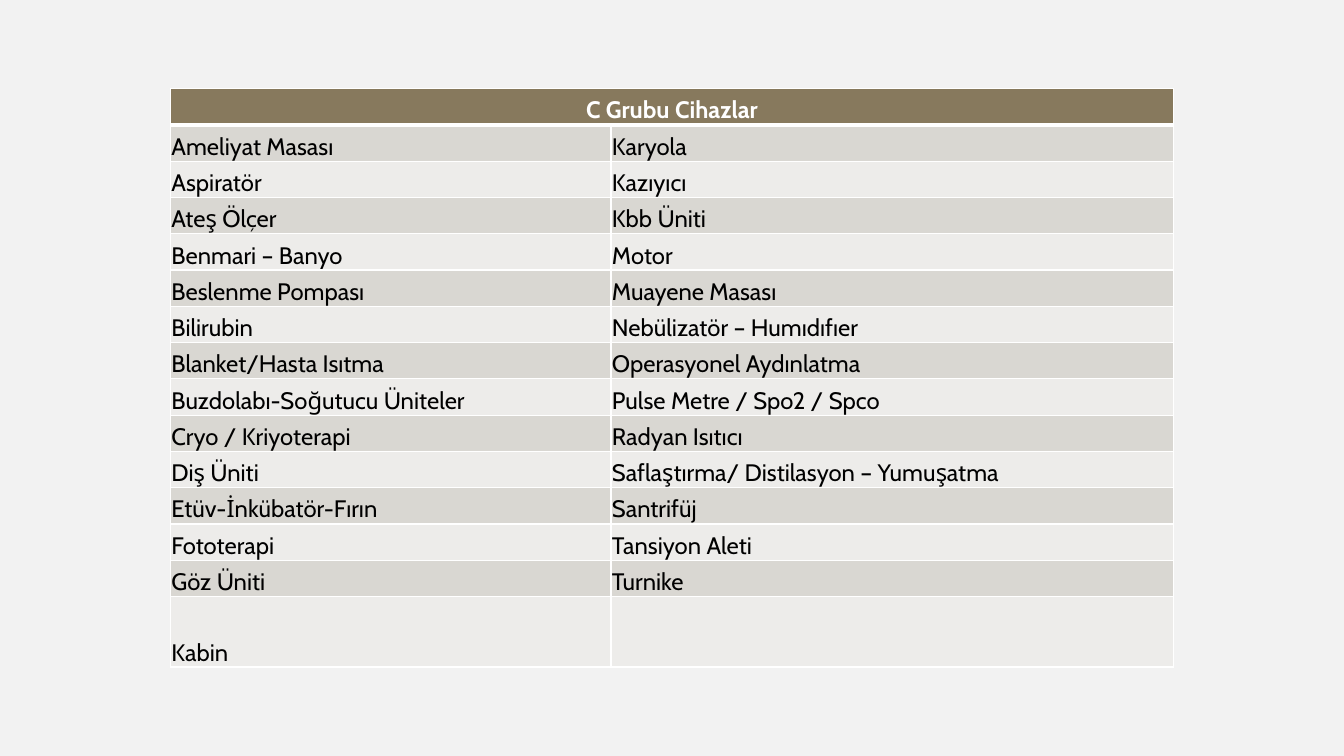
from lxml import etree
from pptx import Presentation
from pptx.dml.color import RGBColor
from pptx.enum.text import MSO_ANCHOR, PP_ALIGN
from pptx.oxml.ns import qn
from pptx.util import Inches, Pt

BACKGROUND = RGBColor(0xF2, 0xF2, 0xF2)
HEADER = RGBColor(0x87, 0x79, 0x5D)
BAND_DARK = RGBColor(0xD9, 0xD7, 0xD2)
BAND_LIGHT = RGBColor(0xED, 0xEC, 0xEA)
WHITE = RGBColor(0xFF, 0xFF, 0xFF)
BLACK = RGBColor(0x00, 0x00, 0x00)

FONT = "Cabin"
COLUMN_WIDTHS = (4.37, 5.58)
ROW_HEIGHT = 0.36
LAST_ROW_HEIGHT = 0.7
TITLE = "C Grubu Cihazlar"
DEVICES = [
    ("Ameliyat Masası", "Karyola"),
    ("Aspiratör", "Kazıyıcı"),
    ("Ateş Ölçer", "Kbb Üniti"),
    ("Benmari – Banyo", "Motor"),
    ("Beslenme Pompası", "Muayene Masası"),
    ("Bilirubin", "Nebülizatör – Humıdıfıer"),
    ("Blanket/Hasta Isıtma", "Operasyonel Aydınlatma"),
    ("Buzdolabı-Soğutucu Üniteler", "Pulse Metre / Spo2 / Spco"),
    ("Cryo / Kriyoterapi", "Radyan Isıtıcı"),
    ("Diş Üniti", "Saflaştırma/ Distilasyon – Yumuşatma"),
    ("Etüv-İnkübatör-Fırın", "Santrifüj"),
    ("Fototerapi", "Tansiyon Aleti"),
    ("Göz Üniti", "Turnike"),
    ("Kabin", ""),
]


def set_borders(cell, top=1, bottom=1):
    tcPr = cell._tc.get_or_add_tcPr()
    for side, width in (("L", 1), ("R", 1), ("T", top), ("B", bottom)):
        ln = etree.SubElement(tcPr, qn(f"a:ln{side}"), w=str(Pt(width)))
        fill = etree.SubElement(ln, qn("a:solidFill"))
        etree.SubElement(fill, qn("a:srgbClr"), val=str(WHITE))


def format_cell(cell, text, fill, color=BLACK, bold=False, align=PP_ALIGN.LEFT):
    cell.fill.solid()
    cell.fill.fore_color.rgb = fill
    cell.vertical_anchor = MSO_ANCHOR.BOTTOM
    cell.margin_left = cell.margin_right = cell.margin_top = Inches(0.01)
    cell.margin_bottom = 0
    cell.text = text
    p = cell.text_frame.paragraphs[0]
    p.alignment = align
    p.font.name = FONT
    p.font.size = Pt(17)
    p.font.bold = bold
    p.font.color.rgb = color


def add_device_table(slide):
    rows = len(DEVICES) + 1
    height = ROW_HEIGHT * (rows - 1) + LAST_ROW_HEIGHT
    table = slide.shapes.add_table(
        rows, 2, Inches(1.69), Inches(0.88),
        Inches(sum(COLUMN_WIDTHS)), Inches(height)).table
    for column, width in zip(table.columns, COLUMN_WIDTHS):
        column.width = Inches(width)
    for row in table.rows:
        row.height = Inches(ROW_HEIGHT)
    table.rows[rows - 1].height = Inches(LAST_ROW_HEIGHT)

    for cell in table.rows[0].cells:
        set_borders(cell, bottom=3)
    header = table.cell(0, 0)
    header.merge(table.cell(0, 1))
    format_cell(header, TITLE, HEADER, WHITE, True, PP_ALIGN.CENTER)

    for i, devices in enumerate(DEVICES, start=1):
        band = BAND_DARK if i % 2 else BAND_LIGHT
        for j, device in enumerate(devices):
            cell = table.cell(i, j)
            set_borders(cell, top=3 if i == 1 else 1)
            format_cell(cell, device, band)


def main():
    prs = Presentation()
    prs.slide_width = Inches(13.33)
    prs.slide_height = Inches(7.5)
    slide = prs.slides.add_slide(prs.slide_layouts[6])
    slide.background.fill.solid()
    slide.background.fill.fore_color.rgb = BACKGROUND
    add_device_table(slide)
    prs.save("out.pptx")


if __name__ == "__main__":
    main()
